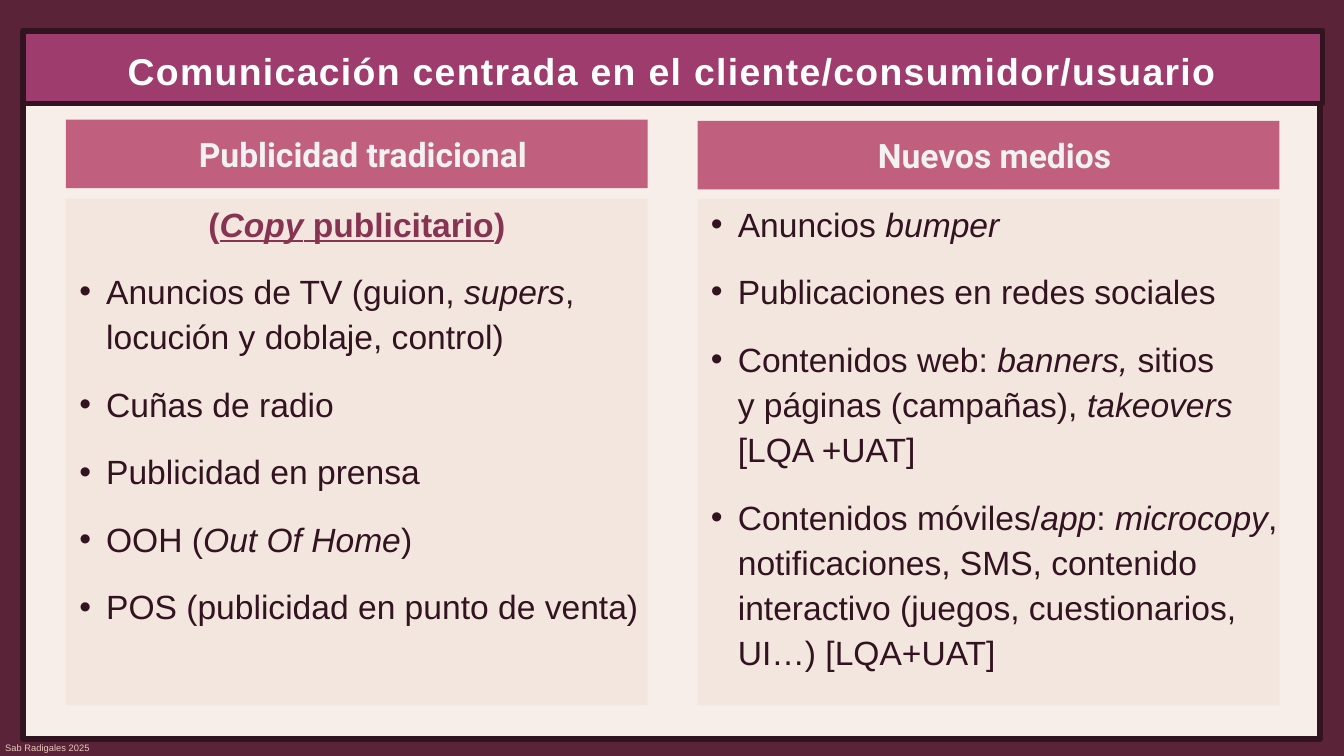
from lxml import etree
from pptx import Presentation
from pptx import util as u
from pptx.dml.color import RGBColor
from pptx.enum import shapes, text
from pptx.oxml.ns import qn

DARK, ROSE, SAND = "321320", "C0607E", "EFDCD3"


def rgb(code):
    return RGBColor.from_string(code)


def write(para, words, size, color, bold=False, face="Arial"):
    """Fill a paragraph; stars mark italics and a newline breaks the line."""
    font = para.font
    font.name, font.size, font.bold = face, u.Pt(size), bold
    font.color.rgb = rgb(color)
    for i, part in enumerate(words.split("*")):
        for j, line in enumerate(part.split("\n")):
            if j:
                para.add_line_break()
            if line:
                run = para.add_run()
                run.text = line
                if i % 2:
                    run.font.italic = True


deck = Presentation()
deck.slide_width = u.Inches(10)
deck.slide_height = u.Inches(10 * 9 / 16)
slide = deck.slides.add_slide(deck.slide_layouts[6])
slide.background.fill.solid()
slide.background.fill.fore_color.rgb = rgb("5A2337")

credit = slide.shapes.add_textbox(*map(u.Inches, (-0.06, 5.47, 1.74, 0.19)))
write(credit.text_frame.paragraphs[0], "Sab Radigales 2025", 5, "E7CBBE")

# Each column: left edge, head top, head, subhead or not, bullets
cols = [
    (0.49, 0.89, "Publicidad tradicional", True, [
        "Anuncios de TV (guion, *supers*, locución y doblaje, control)",
        "Cuñas de radio",
        "Publicidad en prensa",
        "OOH (*Out Of Home*)",
        "POS (publicidad en punto de venta)",
    ]),
    (5.19, 0.9, "Nuevos medios", False, [
        "Anuncios *bumper*",
        "Publicaciones en redes sociales",
        "Contenidos web: *banners, *sitios\ny páginas (campañas), *takeovers* [LQA +UAT]",
        "Contenidos móviles/*app*: *microcopy*, notificaciones, SMS, contenido "
        "interactivo (juegos, cuestionarios, UI…) [LQA+UAT]",
    ]),
]

# Page, its frame, the title band, then a bar and a body per column
rects = [
    (0.17, 0.78, 9.65, 4.72, "F7EEE9", None),
    (0.17, 0.77, 9.65, 4.73, None, DARK),
    (0.17, 0.23, 9.67, 0.54, "9E3C6D", DARK),
]
for left, top, *rest in cols:
    rects += [(left, top, 4.33, 0.51, ROSE, None), (left, 1.48, 4.33, 3.77, SAND, None)]

boxes = []
for *place, fill, edge in rects:
    box = slide.shapes.add_shape(shapes.MSO_SHAPE.RECTANGLE, *map(u.Inches, place))
    box.shadow.inherit = False
    if fill:
        box.fill.solid()
        box.fill.fore_color.rgb = rgb(fill)
    else:
        box.fill.background()
    if edge:
        box.line.color.rgb = rgb(edge)
        box.line.width = u.Pt(3)
    else:
        box.line.fill.background()
    boxes.append(box)

title = slide.shapes.add_textbox(*map(u.Inches, (0.4, 0.21, 9.2, 0.63)))
for box in boxes[3:] + [title]:
    frame = box.text_frame
    frame.word_wrap = True
    frame.margin_left = frame.margin_right = frame.margin_top = frame.margin_bottom = 0
    frame.vertical_anchor = text.MSO_ANCHOR.MIDDLE

para = title.text_frame.paragraphs[0]
para.alignment = text.PP_ALIGN.CENTER
write(para, "Comunicación centrada en el cliente/consumidor/usuario", 20, "FFFFFF", True)
para.runs[0].font._element.set("spc", "70")

for (left, top, head, sub, items), bar, body in zip(cols, boxes[3::2], boxes[4::2]):
    para = bar.text_frame.paragraphs[0]
    para.alignment = text.PP_ALIGN.CENTER
    props = para._p.get_or_add_pPr()
    props.set("marL", str(u.Inches(0.1)))
    props.set("indent", str(u.Inches(-0.01)))
    write(para, head, 18, "F2F2F2", True, "Roboto")

    tint = body.fill._xPr.find(".//" + qn("a:srgbClr"))
    etree.SubElement(tint, qn("a:alpha")).set("val", "41000")
    frame = body.text_frame
    frame.vertical_anchor = text.MSO_ANCHOR.TOP
    para = frame.paragraphs[0]
    if sub:
        para.alignment = text.PP_ALIGN.CENTER
        para.line_spacing, para.space_after = 1.12, u.Pt(12)
        write(para, "(*Copy* publicitario", 18, "873453", True)
        for run in para.runs[1:]:
            run.font.underline = True
        para.add_run().text = ")"
        para = frame.add_paragraph()
    for i, item in enumerate(items):
        if i:
            para = frame.add_paragraph()
        para.alignment = text.PP_ALIGN.LEFT
        para.line_spacing, para.space_after = 1.12, u.Pt(12)
        props = para._p.get_or_add_pPr()
        props.set("marL", str(u.Inches(0.3)))
        props.set("indent", str(u.Inches(-0.2)))
        tone = etree.SubElement(props, qn("a:buClr"))
        etree.SubElement(tone, qn("a:srgbClr")).set("val", DARK)
        etree.SubElement(props, qn("a:buFont")).set("typeface", "Arial")
        etree.SubElement(props, qn("a:buChar")).set("char", "•")
        write(para, item, 18, DARK)

deck.save("out.pptx")
